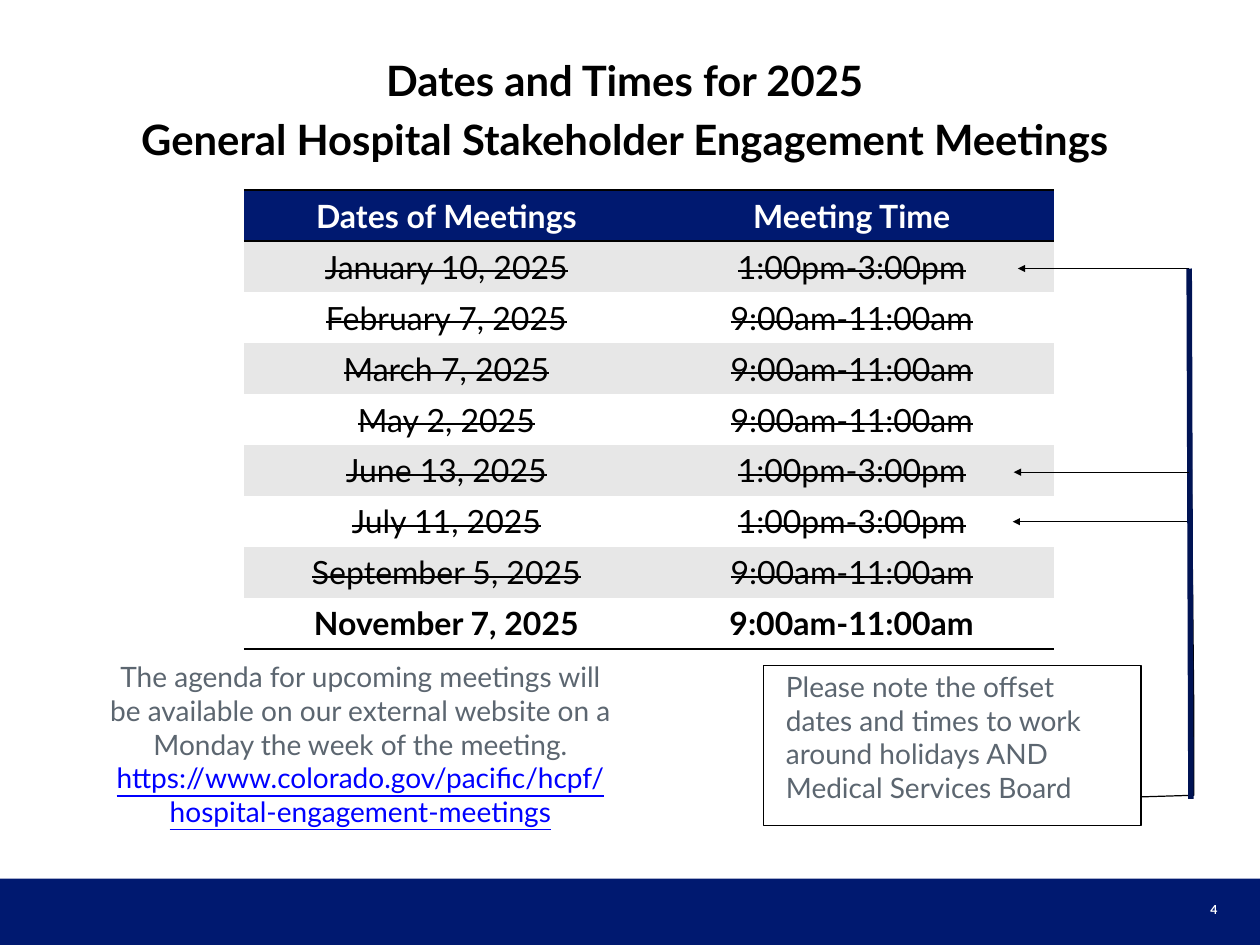
import dataclasses

import pptx
import pptx.dml.color
import pptx.enum.shapes
import pptx.enum.text
import pptx.oxml
import pptx.oxml.ns
import pptx.util

Cm = pptx.util.Cm
Pt = pptx.util.Pt
ALIGN = pptx.enum.text.PP_ALIGN
ANCHOR = pptx.enum.text.MSO_ANCHOR
SHAPE = pptx.enum.shapes.MSO_SHAPE

FONT = "Lato"
COLORS = {
    "navy": "001970",
    "spine": "001354",
    "band": "E7E7E7",
    "white": "FFFFFF",
    "black": "000000",
    "gray": "5C6670",
    "link": "0000FF",
}
NO_GRID_STYLE = "{2D5ABB26-0587-4C30-8999-92F81FD0307C}"
ROW_HEIGHT = 1.46
SPINE_X = 34.09


@dataclasses.dataclass
class Meeting:
    date: str
    time: str
    past: bool = True


@dataclasses.dataclass
class Label:
    box: tuple[float, float, float, float]
    lines: list[str]
    size: float
    color: str
    align: ALIGN = ALIGN.CENTER
    anchor: ANCHOR = ANCHOR.TOP
    bold: bool = False
    gap: float = 0


@dataclasses.dataclass
class Line:
    start: tuple[float, float]
    end: tuple[float, float]
    color: str = "black"
    width: float = 1
    arrow: bool = True


AFTERNOON = "1:00pm-3:00pm"
MORNING = "9:00am-11:00am"
MEETINGS = [
    Meeting("January 10, 2025", AFTERNOON),
    Meeting("February 7, 2025", MORNING),
    Meeting("March 7, 2025", MORNING),
    Meeting("May 2, 2025", MORNING),
    Meeting("June 13, 2025", AFTERNOON),
    Meeting("July 11, 2025", AFTERNOON),
    Meeting("September 5, 2025", MORNING),
    Meeting("November 7, 2025", MORNING, past=False),
]
TITLE = Label(
    (1.35, 1.02, 33.12, 4.24),
    ["Dates and Times for 2025", "General Hospital Stakeholder Engagement Meetings"],
    34, "black", anchor=ANCHOR.MIDDLE, bold=True, gap=6.8,
)
AGENDA = Label(
    (2.74, 18.8, 15.19, 6.58),
    [
        "The agenda for upcoming meetings will be available on our external "
        "website on a Monday the week of the meeting.",
        "https://www.colorado.gov/pacific/hcpf/hospital-engagement-meetings",
    ],
    22.8, "gray",
)
NOTE = Label(
    (22.28, 19.08, 10.13, 4.14),
    ["Please note the offset dates and times to work around holidays AND Medical Services Board"],
    22.8, "gray", align=ALIGN.LEFT,
)
NUMBER = Label((29.18, 25.37, 5.97, 1.45), ["4"], 10.1, "white",
               align=ALIGN.RIGHT, anchor=ANCHOR.MIDDLE, bold=True)
LINES = [
    Line((SPINE_X, 14.96), (29.03, 14.96)),
    Line((SPINE_X, 7.7), (29.18, 7.7)),
    Line((SPINE_X, 7.7), (34.14, 22.91), "spine", 4.5, arrow=False),
    Line((SPINE_X, 13.54), (29.06, 13.54)),
]


def rgb(name: str) -> pptx.dml.color.RGBColor:
    return pptx.dml.color.RGBColor.from_string(COLORS[name])


def style_run(r, size: float, color: str, bold: bool = False) -> None:
    r.font.name = FONT
    r.font.size = Pt(size)
    r.font.bold = bold
    r.font.color.rgb = rgb(color)


def add_label(slide, label: Label):
    sp = slide.shapes.add_textbox(*map(Cm, label.box))
    tf = sp.text_frame
    tf.word_wrap = True
    tf.vertical_anchor = label.anchor
    tf.text = "\n".join(label.lines)
    for i, p in enumerate(tf.paragraphs):
        p.alignment = label.align
        if i and label.gap:
            p.space_before = Pt(label.gap)
        style_run(p.runs[0], label.size, label.color, label.bold)
    return sp


def add_line(slide, line: Line) -> None:
    cxn = slide.shapes.add_connector(
        pptx.enum.shapes.MSO_CONNECTOR.STRAIGHT, *map(Cm, line.start + line.end))
    cxn.line.color.rgb = rgb(line.color)
    cxn.line.width = Pt(line.width)
    if line.arrow:
        tail = pptx.oxml.parse_xml(
            f'<a:tailEnd {pptx.oxml.ns.nsdecls("a")} type="triangle"/>')
        cxn.line._get_or_add_ln().append(tail)
    cxn._element.spPr.append(
        pptx.oxml.parse_xml(f'<a:effectLst {pptx.oxml.ns.nsdecls("a")}/>'))


def set_borders(cell, sides: str) -> None:
    for i, side in enumerate(sides):
        ln = pptx.oxml.parse_xml(
            f'<a:ln{side} {pptx.oxml.ns.nsdecls("a")} w="{Pt(2)}"><a:solidFill>'
            f'<a:srgbClr val="{COLORS["black"]}"/></a:solidFill></a:ln{side}>')
        cell._tc.get_or_add_tcPr().insert(i, ln)


def fill_cell(cell, text: str, fill: str, color: str, bold: bool,
              strike: bool, borders: str) -> None:
    cell.margin_left = cell.margin_right = Cm(0.36)
    cell.margin_top = cell.margin_bottom = Cm(0.18)
    cell.fill.solid()
    cell.fill.fore_color.rgb = rgb(fill)
    set_borders(cell, borders)
    p = cell.text_frame.paragraphs[0]
    p.text = text
    p.alignment = ALIGN.CENTER
    r = p.runs[0]
    style_run(r, 26, color, bold)
    if strike:
        r.font._element.set("strike", "sngStrike")


def add_schedule(slide) -> None:
    count = len(MEETINGS) + 1
    frame = slide.shapes.add_table(
        count, 2, Cm(6.99), Cm(5.46), Cm(23.24), Cm(ROW_HEIGHT * count))
    table = frame.table
    table.first_row = table.horz_banding = False
    table._tbl.tblPr.find(pptx.oxml.ns.qn("a:tableStyleId")).text = NO_GRID_STYLE
    for row in table.rows:
        row.height = Cm(ROW_HEIGHT)
    for col, text in enumerate(("Dates of Meetings", "Meeting Time")):
        fill_cell(table.cell(0, col), text, "navy", "white", True, False, "TB")
    for row, meeting in enumerate(MEETINGS, 1):
        fill = "band" if row % 2 else "white"
        borders = "B" if row == len(MEETINGS) else ""
        for col, text in enumerate((meeting.date, meeting.time)):
            fill_cell(table.cell(row, col), text, fill, "black",
                      not meeting.past, meeting.past, borders)


def add_footer(slide) -> None:
    sp = slide.shapes.add_shape(SHAPE.RECTANGLE, 0, Cm(25.2), Cm(36.12), Cm(1.9))
    sp.shadow.inherit = False
    sp.fill.solid()
    sp.fill.fore_color.rgb = rgb("navy")
    sp.line.fill.background()


def add_callout(slide) -> None:
    sp = slide.shapes.add_shape(
        SHAPE.LINE_CALLOUT_3, Cm(21.89), Cm(19.08), Cm(10.82), Cm(4.6))
    sp.shadow.inherit = False
    sp.rotation = 180
    for i, value in enumerate((0.18, 0, 0.19, -0.14, 0.68, -0.14, 3.03, -0.13)):
        sp.adjustments[i] = value
    sp.fill.background()
    sp.line.color.rgb = rgb("black")
    sp.line.width = Pt(1)


def main() -> None:
    prs = pptx.Presentation()
    prs.slide_width, prs.slide_height = Cm(36.12), Cm(27.1)
    slide = prs.slides.add_slide(prs.slide_layouts[6])
    add_footer(slide)
    add_label(slide, TITLE)
    add_schedule(slide)
    link = add_label(slide, AGENDA).text_frame.paragraphs[1].runs[0]
    link.font.color.rgb = rgb("link")
    link.font.underline = True
    add_callout(slide)
    add_label(slide, NOTE)
    for line in LINES:
        add_line(slide, line)
    add_label(slide, NUMBER)
    prs.save("out.pptx")


if __name__ == "__main__":
    main()
